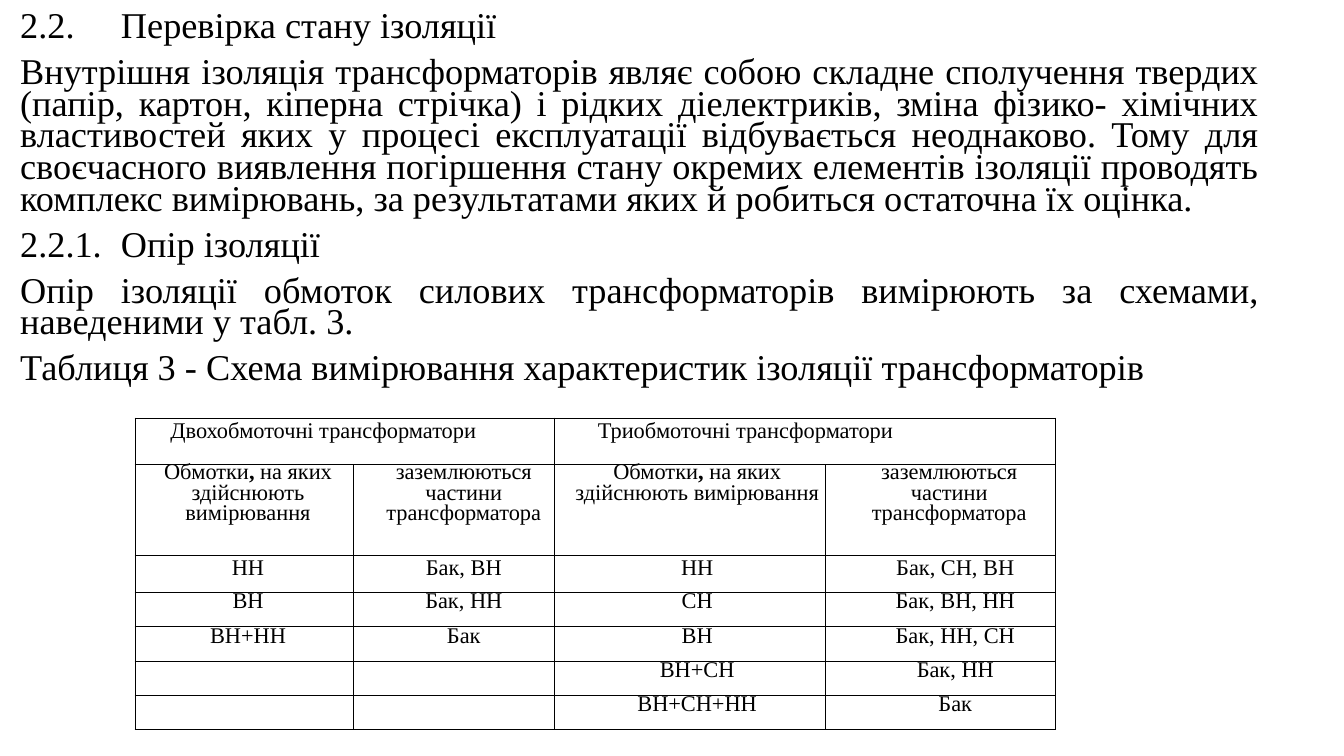
"""Build the slide on checking transformer insulation, with the table of measuring schemes."""
from dataclasses import dataclass

from lxml.etree import SubElement
from pptx import Presentation
from pptx.dml.color import RGBColor
from pptx.enum.text import MSO_ANCHOR, MSO_AUTO_SIZE, PP_ALIGN
from pptx.oxml.ns import qn
from pptx.util import Inches, Pt


@dataclass(frozen=True)
class Theme:
    font: str = "Times New Roman"
    ink: RGBColor = RGBColor(0, 0, 0)
    body_size: float = 25.9
    table_size: float = 16
    border: float = 1


THEME = Theme()
BODY = [
    "2.2.\tПеревірка стану ізоляції",
    "Внутрішня ізоляція трансформаторів являє собою складне сполучення твердих "
    "(папір, картон, кіперна стрічка) і рідких діелектриків, зміна фізико- хімічних "
    "властивостей яких у процесі експлуатації відбувається неоднаково. Тому для "
    "своєчасного виявлення погіршення стану окремих елементів ізоляції проводять "
    "комплекс вимірювань, за результатами яких й робиться остаточна їх оцінка.",
    "2.2.1.\tОпір ізоляції",
    "Опір ізоляції обмоток силових трансформаторів вимірюють за схемами, "
    "наведеними у табл. 3.",
    "Таблиця 3 - Схема вимірювання характеристик ізоляції трансформаторів",
]
GROUPS = [("Двохобмоточні трансформатори", 0.35), ("Триобмоточні трансформатори", 0.43)]
MEASURED = ("Обмотки", ", ", "на яких здійснюють вимірювання")
GROUNDED = ("заземлюються частини трансформатора",)
HEADINGS = [MEASURED, GROUNDED, MEASURED, GROUNDED]
SCHEMES = [
    ("HH", "Бак, BH", "HH", "Бак, CH, BH"),
    ("BH", "Бак, HH", "CH", "Бак, BH, HH"),
    ("BH+HH", "Бак", "BH", "Бак, HH, CH"),
    ("", "", "BH+CH", "Бак, HH"),
    ("", "", "ВН+СН+НН", "Бак"),
]
COLUMNS = [2.17, 1.99, 2.69, 2.28]
ROWS = [0.46, 0.9, 0.37] + [0.34] * 4
HEADING_INDENTS = [0.07, 0.19, 0.14, 0.17]
SCHEME_INDENTS = [0.07, 0.19, 0.14, 0.29]


def style(para, size, align, indent=0, before=0, spacing=None):
    para.alignment = align
    para.space_before = Pt(before)
    para.line_spacing = spacing
    para.font.name, para.font.size = THEME.font, Pt(size)
    para.font.color.rgb = THEME.ink
    properties = para._p.get_or_add_pPr()
    properties.set("marL", str(Inches(indent)))
    properties.set("indent", "0")


def add_body(slide):
    box = slide.placeholders[1]
    box.left, box.top, box.width, box.height = map(Inches, (0.1, 0.08, 12.49, 3.92))
    frame = box.text_frame
    frame.text = "\n".join(BODY)
    frame.word_wrap, frame.auto_size = True, MSO_AUTO_SIZE.NONE
    frame.vertical_anchor = MSO_ANCHOR.TOP
    for para in frame.paragraphs:
        style(para, THEME.body_size, PP_ALIGN.JUSTIFY, before=10, spacing=0.73)
        properties = para._p.get_or_add_pPr()
        bullet = SubElement(properties, qn("a:buNone"))
        properties.find(qn("a:defRPr")).addprevious(bullet)


def frame_cell(cell):
    cell.margin_left = cell.margin_right = cell.margin_top = cell.margin_bottom = 0
    properties = cell._tc.get_or_add_tcPr()
    for side in ("lnL", "lnR", "lnT", "lnB"):
        line = SubElement(properties, qn(f"a:{side}"), w=str(Pt(THEME.border)))
        SubElement(SubElement(line, qn("a:solidFill")), qn("a:srgbClr"), val=str(THEME.ink))
    cell.fill.background()


def write_cell(cell, parts, align, indent, before=0, spacing=None):
    para = cell.text_frame.paragraphs[0]
    for part in parts:
        span = para.add_run()
        span.text = part
        if part == ", ":
            span.font.bold = True
    style(para, THEME.table_size, align, indent, before, spacing)


def add_schemes(slide):
    table = slide.shapes.add_table(
        len(ROWS), len(COLUMNS), Inches(1.34), Inches(4.15),
        Inches(sum(COLUMNS)), Inches(sum(ROWS))).table
    table.first_row = table.horz_banding = False
    for column, width in zip(table.columns, COLUMNS):
        column.width = Inches(width)
    for row, height in zip(table.rows, ROWS):
        row.height = Inches(height)
    for cell in table.iter_cells():
        frame_cell(cell)
    for number, (group, indent) in enumerate(GROUPS):
        start = table.cell(0, 2 * number)
        start.merge(table.cell(0, 2 * number + 1))
        write_cell(start, [group], PP_ALIGN.LEFT, indent, before=3.9)
    for column, (parts, indent) in enumerate(zip(HEADINGS, HEADING_INDENTS)):
        write_cell(table.cell(1, column), parts, PP_ALIGN.CENTER, indent, spacing=Pt(14.4))
    for row, scheme in enumerate(SCHEMES, 2):
        before, spacing = (0.5, None) if row == 2 else (0, Pt(15.1))
        for column, (text, indent) in enumerate(zip(scheme, SCHEME_INDENTS)):
            parts = [text] if text else []
            write_cell(table.cell(row, column), parts, PP_ALIGN.CENTER, indent, before, spacing)


def main():
    deck = Presentation()
    deck.slide_width, deck.slide_height = Inches(13.33), Inches(7.5)
    slide = deck.slides.add_slide(deck.slide_layouts[1])
    title = slide.shapes.title.element
    title.getparent().remove(title)
    add_body(slide)
    add_schemes(slide)
    deck.save("out.pptx")


if __name__ == "__main__":
    main()
